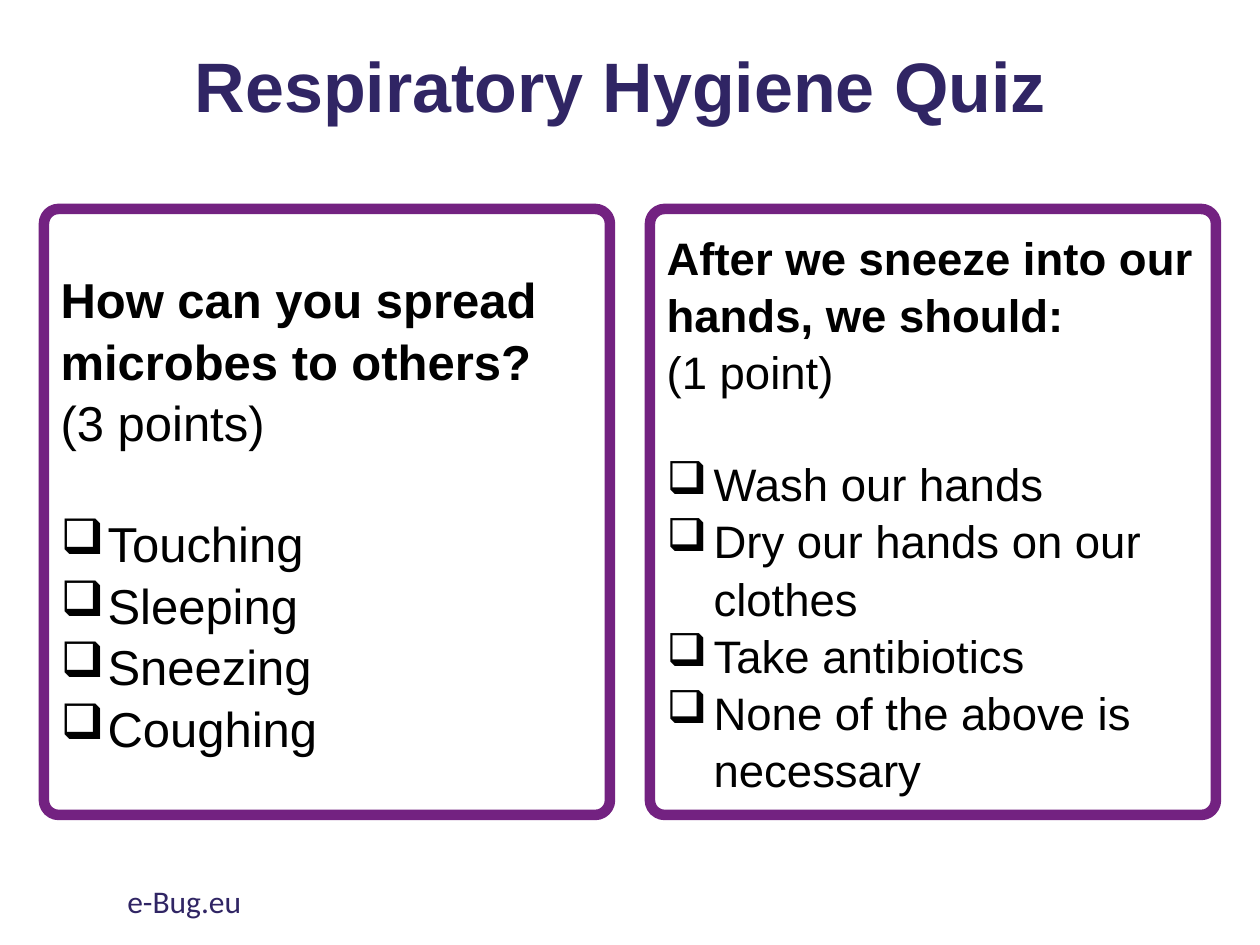
from lxml import etree
from pptx import Presentation
from pptx.dml.color import RGBColor
from pptx.enum.shapes import MSO_SHAPE
from pptx.enum.text import MSO_ANCHOR, PP_ALIGN
from pptx.oxml.ns import qn
from pptx.util import Emu, Pt

ROUND = MSO_SHAPE.ROUNDED_RECTANGLE
MIDDLE, TOP = MSO_ANCHOR.MIDDLE, MSO_ANCHOR.TOP
LEFT, CENTER = PP_ALIGN.LEFT, PP_ALIGN.CENTER
COLORS = {"navy": "302564", "purple": "732281", "black": "000000"}
CARDS = [
    (28, "How can you spread microbes to others?", "(3 points)",
     ["Touching", "Sleeping", "Sneezing", "Coughing"]),
    (26, "After we sneeze into our hands, we should:", "(1 point)",
     ["Wash our hands", "Dry our hands on our clothes",
      "Take antibiotics", "None of the above is necessary"]),
]


def px(num):
    """Turn pixels into EMU."""
    return Emu(round(num * 914400 / 126))


def color(name):
    """Look up a colour by name."""
    return RGBColor.from_string(COLORS[name])


def apply(item, values):
    """Set attributes from a dict."""
    for key, value in values.items():
        setattr(item, key, value)


def place(shape, box):
    """Move a shape to a pixel box."""
    apply(shape, dict(zip(("left", "top", "width", "height"), map(px, box))))


def style(para, size, tint, bold=False, face="Arial", **form):
    """Format a paragraph and its font."""
    apply(para, form)
    apply(para.font, {"size": Pt(size), "bold": bold, "name": face})
    para.font.color.rgb = color(tint)


def bullet(para):
    """Give a paragraph a hanging check box."""
    props = para._p.get_or_add_pPr()
    props.set("marL", str(px(47)))
    props.set("indent", str(-px(47)))
    etree.SubElement(props, qn("a:buChar")).set("char", "❑")
    tabs = etree.SubElement(props, qn("a:tabLst"))
    apply_tab = etree.SubElement(tabs, qn("a:tab"))
    apply_tab.set("pos", str(px(63)))
    apply_tab.set("algn", "l")


def title(slide, box):
    """Fill the slide title."""
    head = slide.shapes.title
    place(head, box)
    frame = head.text_frame
    frame.text = "Respiratory Hygiene Quiz "
    apply(frame, {"word_wrap": True, "vertical_anchor": MIDDLE})
    style(frame.paragraphs[0], 40, "navy", True,
          alignment=CENTER, line_spacing=0.9)


def card(slide, box, size, ask, score, items):
    """Draw one question card with its answers."""
    shape = slide.shapes.add_shape(ROUND, *map(px, box))
    shape.adjustments[0] = 0.026
    shape.shadow.inherit = False
    shape.fill.background()
    shape.line.color.rgb = color("purple")
    shape.line.width = Pt(6)
    frame = shape.text_frame
    apply(frame, {"word_wrap": True, "vertical_anchor": MIDDLE})
    frame.text = "\n".join([ask, score, *items])
    for row, para in enumerate(frame.paragraphs):
        if row > 1:
            bullet(para)
        gap = Pt(size * 1.2) if row == 2 else Pt(0)
        style(para, size, "black", row == 0, alignment=LEFT,
              line_spacing=1.05, space_before=gap)


def footer(slide, box):
    """Write the site address."""
    frame = slide.shapes.add_textbox(*map(px, box)).text_frame
    apply(frame, {"word_wrap": True, "vertical_anchor": TOP})
    frame.text = "e-Bug.eu"
    style(frame.paragraphs[0], 18, "navy", face="Calibri")


def main():
    """Build and save the quiz slide."""
    deck = Presentation()
    apply(deck, {"slide_width": px(1260), "slide_height": px(945)})
    slide = deck.slides.add_slide(deck.slide_layouts[5])
    title(slide, (87, 32, 1086, 115))
    wide, gap = 566, 40
    for col, data in enumerate(CARDS):
        card(slide, (44 + col * (wide + gap), 209, wide, 606), *data)
    footer(slide, (115, 876, 426, 50))
    deck.save("out.pptx")


if __name__ == "__main__":
    main()
